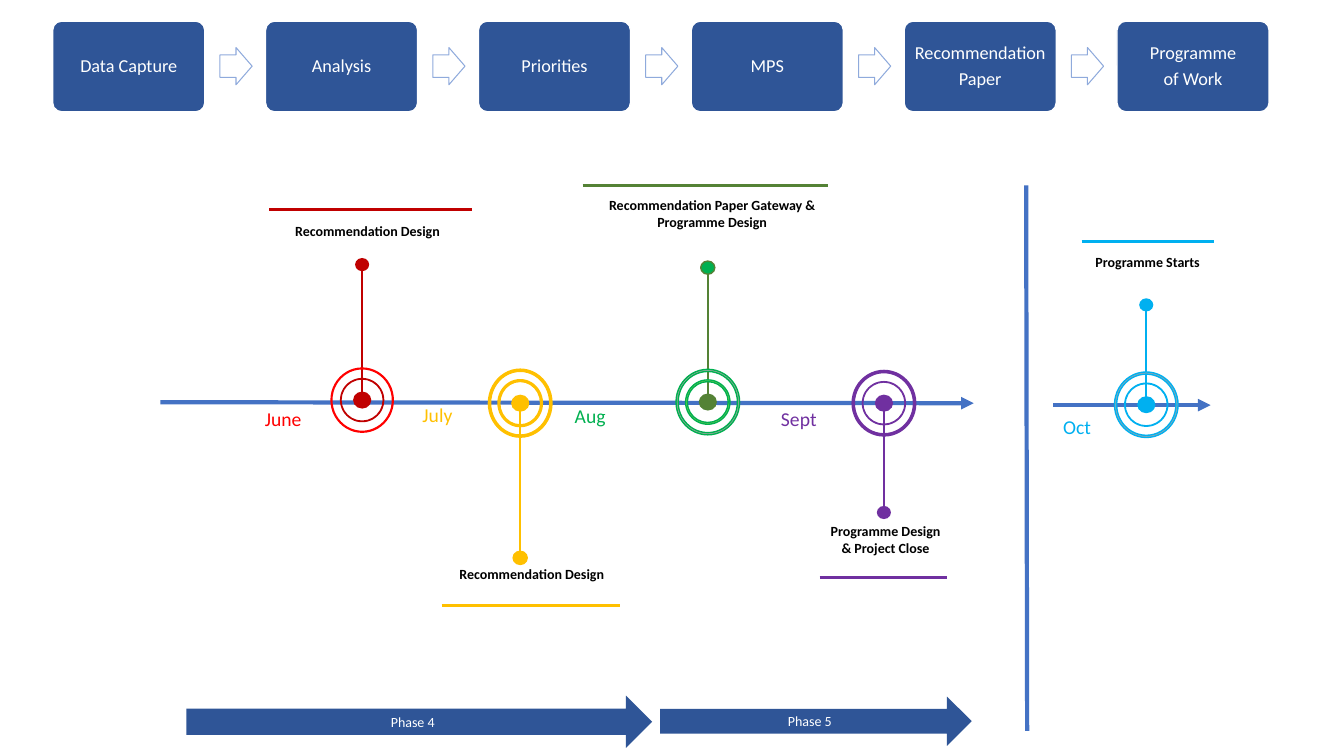
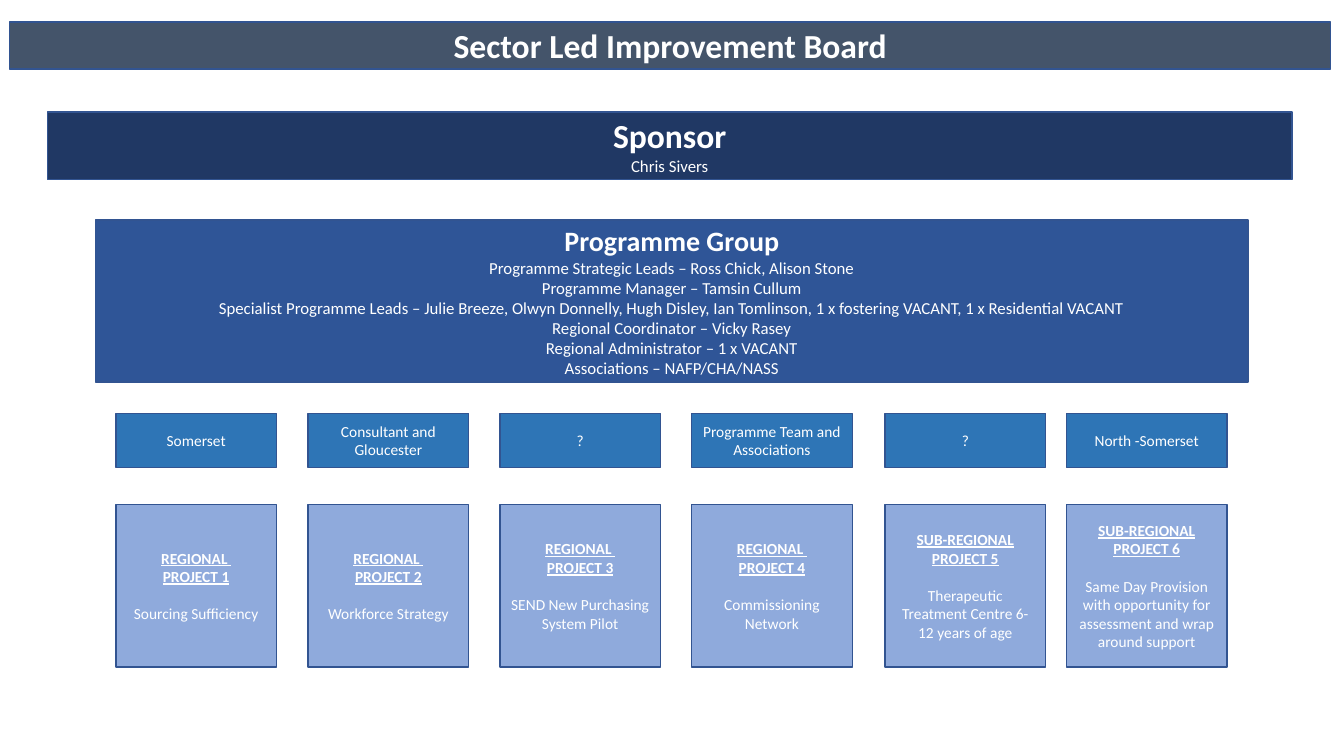
"""Build a programme timeline slide and a governance structure slide."""
from dataclasses import dataclass
from typing import Optional, Sequence

import lxml.etree
import pptx
import pptx.dml.color
import pptx.dml.fill
import pptx.enum.shapes
import pptx.enum.text
import pptx.oxml.ns
import pptx.presentation
import pptx.shapes.autoshape
import pptx.shapes.base
import pptx.shapes.connector
import pptx.slide
import pptx.text.text
import pptx.util

Pt = pptx.util.Pt
SHAPE = pptx.enum.shapes.MSO_SHAPE
ALIGN = pptx.enum.text.PP_ALIGN
ANCHOR = pptx.enum.text.MSO_ANCHOR

FONT = "Calibri"
WHITE, BLACK = "FFFFFF", "000000"
BLUE, AXIS_BLUE, PALE_BLUE, MID_BLUE = "2F5597", "4472C4", "8FAADC", "2E75B6"
NAVY, SLATE, BORDER = "203864", "44546A", "325491"
RED, DARK_RED, GOLD, PURPLE, CYAN = "FF0000", "C00000", "FFC000", "7030A0", "00B0F0"
GREEN, DARK_GREEN, LIME, GREY = "00B050", "548235", "92D050", "A6A6A6"


@dataclass(frozen=True)
class Box:
    """A rectangle in points."""
    left: float
    top: float
    width: float
    height: float


@dataclass(frozen=True)
class Line:
    """One paragraph and its style."""
    text: str
    size: float
    bold: bool = False
    underline: bool = False
    before: float = 0


@dataclass(frozen=True)
class Ring:
    """Fill and optional outline of a dial ring."""
    fill: str
    outline: Optional[str] = None


@dataclass(frozen=True)
class Milestone:
    """A dial on the timeline with its pin, rule and label."""
    x: float
    y: float
    tip_y: float
    colour: str
    inner: Ring
    outer: Ring
    tip: Ring
    rule_left: float
    rule_right: float
    rule_y: float
    label: Box
    text: Sequence[str]
    align: int = ALIGN.CENTER
    stretch: float = 0


@dataclass(frozen=True)
class Month:
    """A month name beside the timeline."""
    name: str
    left: float
    top: float
    colour: str


@dataclass(frozen=True)
class Phase:
    """A block arrow that spans a phase."""
    name: str
    box: Box


@dataclass(frozen=True)
class Project:
    """A project column with its lead."""
    left: float
    lead: str
    heading: Sequence[str]
    topic: str


@dataclass(frozen=True)
class Band:
    """A full-width governance band."""
    box: Box
    fill: str
    lines: Sequence[Line]


STEPS = (["Data Capture"], ["Analysis"], ["Priorities"], ["MPS"],
         ["Recommendation", "Paper"], ["Programme", "of Work"])
MILESTONES = (
    Milestone(258.7, 285.8, 189, DARK_RED, Ring(DARK_RED), Ring(RED), Ring(DARK_RED),
              192.3, 337, 149.8, Box(203.8, 155.5, 164, 21), ["Recommendation Design"],
              ALIGN.LEFT),
    Milestone(371.6, 288, 398.5, GOLD, Ring(GOLD, GOLD), Ring(GOLD, GOLD), Ring(GOLD, GOLD),
              315.4, 442.8, 432.7, Box(306.7, 400.3, 146.2, 39.6),
              ["Recommendation Design"], stretch=1.8),
    Milestone(505.6, 287.2, 191.2, DARK_GREEN, Ring(LIME, GREEN), Ring(GREY, GREEN),
              Ring(GREEN, DARK_GREEN), 416.2, 591.1, 132.5,
              Box(408.2, 136.8, 200.9, 39.6),
              ["Recommendation Paper Gateway & Programme Design"]),
    Milestone(631.4, 288, 366.1, PURPLE, Ring(PURPLE), Ring(PURPLE, PURPLE), Ring(PURPLE),
              585.4, 676.1, 412.6, Box(558.7, 370, 147.6, 33.1),
              ["Programme Design", "& Project Close"]),
    Milestone(818.8, 289.1, 217.8, CYAN, Ring(CYAN), Ring(GREY, CYAN), Ring(CYAN),
              772.6, 866.9, 172.8, Box(745.9, 177.8, 147.6, 19.4), ["Programme Starts"]),
)
MONTHS = (Month("June", 154.4, 287.3, RED), Month("July", 264.6, 284.4, GOLD),
          Month("Aug", 373.7, 285.1, GREEN), Month("Sept", 522.7, 287.3, PURPLE),
          Month("Oct", 721.4, 293, CYAN))
PHASES = (Phase("Phase 4", Box(133.2, 496.8, 332.6, 37.4)),
          Phase("Phase 5", Box(471.6, 497.5, 222.5, 35.3)))
BANDS = (
    Band(Box(33.8, 79.9, 889.2, 48.2), NAVY,
         [Line("Sponsor", 24, True), Line("Chris Sivers", 12)]),
    Band(Box(68.4, 157, 823, 115.9), BLUE, [Line("Programme Group", 20, True)] + [
        Line(text, 12) for text in (
            "Programme Strategic Leads – Ross Chick, Alison Stone",
            "Programme Manager – Tamsin Cullum",
            "Specialist Programme Leads – Julie Breeze, Olwyn Donnelly, Hugh Disley, "
            "Ian Tomlinson, 1 x fostering VACANT, 1 x Residential VACANT",
            "Regional Coordinator – Vicky Rasey",
            "Regional Administrator – 1 x VACANT",
            "Associations – NAFP/CHA/NASS")]),
)
PROJECTS = (
    Project(82.8, "Somerset", ["REGIONAL ", "PROJECT 1"], "Sourcing Sufficiency"),
    Project(220.1, "Consultant and Gloucester", ["REGIONAL ", "PROJECT 2"],
            "Workforce Strategy"),
    Project(357.1, "?", ["REGIONAL ", "PROJECT 3"], "SEND New Purchasing System Pilot"),
    Project(494.1, "Programme Team and Associations", ["REGIONAL ", "PROJECT 4"],
            "Commissioning Network"),
    Project(632.2, "?", ["SUB-REGIONAL PROJECT 5"],
            "Therapeutic Treatment Centre 6-12 years of age"),
    Project(761.8, "North -Somerset", ["SUB-REGIONAL PROJECT 6"],
            "Same Day Provision with opportunity for assessment and wrap around support"),
)


def paint(fill: pptx.dml.fill.FillFormat, colour: str) -> None:
    """Apply a solid hex colour to a fill."""
    fill.solid()
    fill.fore_color.rgb = pptx.dml.color.RGBColor.from_string(colour)


def place(shape: pptx.shapes.base.BaseShape, box: Box) -> None:
    """Move and size a shape."""
    shape.left, shape.top = Pt(box.left), Pt(box.top)
    shape.width, shape.height = Pt(box.width), Pt(box.height)


def dress(shape: pptx.shapes.autoshape.Shape, fill: str, outline: Optional[str] = None,
          weight: float = 1) -> None:
    """Set the fill and outline of a shape."""
    paint(shape.fill, fill)
    if outline is None:
        shape.line.fill.background()
    else:
        paint(shape.line.fill, outline)
        shape.line.width = Pt(weight)


def write(frame: pptx.text.text.TextFrame, lines: Sequence[Line], colour: str = WHITE,
          align: int = ALIGN.CENTER, anchor: int = ANCHOR.MIDDLE,
          inset: Optional[float] = None) -> None:
    """Fill a text frame with styled paragraphs."""
    frame.word_wrap = True
    frame.auto_size = pptx.enum.text.MSO_AUTO_SIZE.NONE
    frame.vertical_anchor = anchor
    if inset is not None:
        frame.margin_left = frame.margin_right = Pt(inset)
        frame.margin_top = frame.margin_bottom = Pt(inset)
    for index, line in enumerate(lines):
        para = frame.add_paragraph() if index else frame.paragraphs[0]
        para.text = line.text
        para.alignment = align
        para.space_before = Pt(line.before)
        font = para.font
        font.name, font.size = FONT, Pt(line.size)
        font.bold, font.underline = line.bold, line.underline
        paint(font.fill, colour)


def add_block(page: pptx.slide.Slide, kind: int, box: Box, fill: str,
              outline: Optional[str] = None, weight: float = 1,
              adjust: Sequence[float] = ()) -> pptx.shapes.autoshape.Shape:
    """Draw a preset shape."""
    shape = page.shapes.add_shape(kind, Pt(box.left), Pt(box.top), Pt(box.width),
                                  Pt(box.height))
    shape.shadow.inherit = False
    dress(shape, fill, outline, weight)
    for index, value in enumerate(adjust):
        shape.adjustments[index] = value
    return shape


def add_label(page: pptx.slide.Slide, box: Box, lines: Sequence[Line], colour: str,
              align: int = ALIGN.CENTER) -> None:
    """Draw a text box."""
    label = page.shapes.add_textbox(Pt(box.left), Pt(box.top), Pt(box.width), Pt(box.height))
    write(label.text_frame, lines, colour, align, ANCHOR.TOP)


def add_rule(page: pptx.slide.Slide, start: tuple[float, float], end: tuple[float, float],
             colour: str, weight: float, arrow: bool = False) -> None:
    """Draw a straight line, with an arrowhead if wanted."""
    rule = page.shapes.add_connector(pptx.enum.shapes.MSO_CONNECTOR.STRAIGHT,
                                     *(Pt(value) for value in start + end))
    paint(rule.line.fill, colour)
    rule.line.width = Pt(weight)
    qn = pptx.oxml.ns.qn
    if arrow:
        lxml.etree.SubElement(rule.line._get_or_add_ln(), qn("a:tailEnd"), type="triangle")
    lxml.etree.SubElement(rule._element.spPr, qn("a:effectLst"))


def add_centred(page: pptx.slide.Slide, kind: int, x: float, y: float, width: float,
                height: float, style: Ring, adjust: Sequence[float] = ()) -> None:
    """Draw a shape around a centre point."""
    box = Box(x - width / 2, y - height / 2, width, height)
    add_block(page, kind, box, style.fill, style.outline, adjust=adjust)


def add_milestone(page: pptx.slide.Slide, item: Milestone) -> None:
    """Draw a milestone's rule, pin, dial and label."""
    add_rule(page, (item.rule_left, item.rule_y), (item.rule_right, item.rule_y),
             item.colour, 2.25)
    add_rule(page, (item.x, item.y), (item.x, item.tip_y), item.colour, 1.5)
    add_centred(page, SHAPE.OVAL, item.x, item.y, 13, 12.2, Ring(item.colour))
    add_centred(page, SHAPE.DONUT, item.x, item.y, 31.7, 31.7 + item.stretch, item.inner,
                [0.039])
    add_centred(page, SHAPE.DONUT, item.x, item.y, 45.4, 46.8 + item.stretch, item.outer,
                [0.034])
    add_centred(page, SHAPE.OVAL, item.x, item.tip_y, 10.1, 9.4, item.tip)
    add_label(page, item.label, [Line(text, 10, True) for text in item.text], BLACK,
              item.align)


def add_steps(page: pptx.slide.Slide) -> None:
    """Draw the process steps and the arrows between them."""
    for index, words in enumerate(STEPS):
        left = 37.6 + 152.05 * index
        step = add_block(page, SHAPE.ROUNDED_RECTANGLE, Box(left, 15.1, 108.7, 64.8), BLUE,
                         WHITE, adjust=[0.1])
        write(step.text_frame, [Line(text, 13) for text in words], inset=5.4)
        for para in step.text_frame.paragraphs:
            para.line_spacing, para.space_after = 0.9, Pt(4.55)
        if index < len(STEPS) - 1:
            add_block(page, SHAPE.RIGHT_ARROW, Box(left + 119.5, 34, 23, 26.6), WHITE,
                      PALE_BLUE, 0.75, [0.6, 0.5])


def build_timeline(deck: pptx.presentation.Presentation) -> None:
    """Build the timeline slide."""
    page = deck.slides.add_slide(deck.slide_layouts[6])
    add_rule(page, (114.5, 287.3), (695.5, 288), AXIS_BLUE, 3, True)
    add_rule(page, (733, 132.5), (733.7, 522), AXIS_BLUE, 3)
    add_rule(page, (752.4, 289.4), (864.7, 289.4), AXIS_BLUE, 3, True)
    for milestone in MILESTONES:
        add_milestone(page, milestone)
    for month in MONTHS:
        add_label(page, Box(month.left, month.top, 95.8, 25.9), [Line(month.name, 14)],
                  month.colour)
    for phase in PHASES:
        arrow = add_block(page, SHAPE.RIGHT_ARROW, phase.box, BLUE)
        write(arrow.text_frame, [Line(phase.name, 10)], inset=2.9)
    add_steps(page)


def build_structure(deck: pptx.presentation.Presentation) -> None:
    """Build the governance structure slide."""
    page = deck.slides.add_slide(deck.slide_layouts[5])
    title = page.shapes.title
    place(title, Box(7, 15.8, 943.4, 33.4))
    dress(title, SLATE, BORDER)
    write(title.text_frame, [Line("Sector Led Improvement Board", 24, True)])
    for band in BANDS:
        shape = add_block(page, SHAPE.RECTANGLE, band.box, band.fill, BORDER)
        write(shape.text_frame, band.lines)
    for project in PROJECTS:
        lead = add_block(page, SHAPE.RECTANGLE, Box(project.left, 295.2, 114.7, 38.6),
                         MID_BLUE, BORDER)
        write(lead.text_frame, [Line(project.lead, 11)])
        card = add_block(page, SHAPE.RECTANGLE, Box(project.left, 360.5, 114.7, 115.9),
                         PALE_BLUE, BORDER)
        heading = [Line(text, 11, True, True) for text in project.heading]
        write(card.text_frame, heading + [Line(project.topic, 11, before=13.4)])


def main() -> None:
    """Build and save the deck."""
    deck = pptx.Presentation()
    deck.slide_width, deck.slide_height = Pt(960), Pt(540)
    build_timeline(deck)
    build_structure(deck)
    deck.save("out.pptx")


if __name__ == "__main__":
    main()
